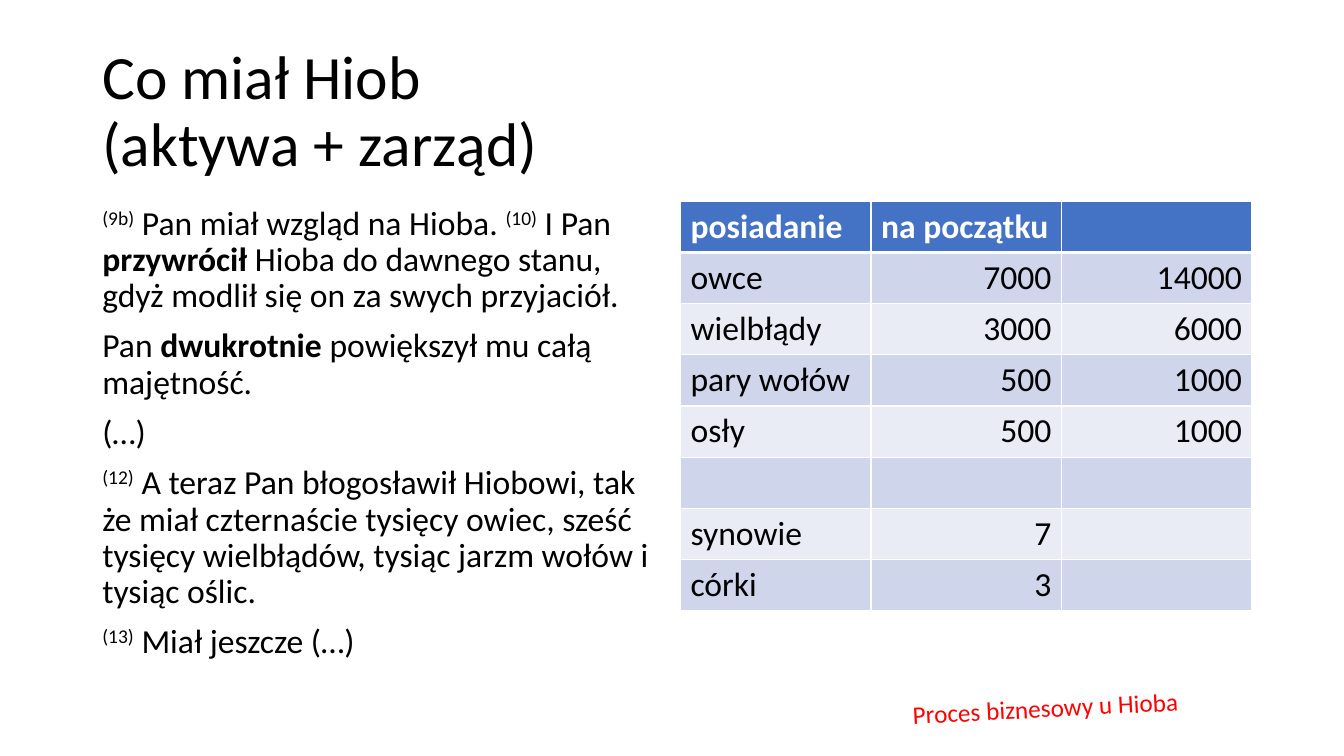
from pptx import Presentation
from pptx.dml.color import RGBColor
from pptx.enum.text import MSO_ANCHOR, PP_ALIGN
from pptx.oxml import parse_xml
from pptx.oxml.ns import nsdecls
from pptx.util import Cm, Pt

# Content: each passage is a list of (style, text) runs
TITLE = "Co miał Hiob\v(aktywa + zarząd)"
VERSES = [
    [("sup", "(9b)"), ("", " Pan miał wzgląd na Hioba. "), ("sup", "(10)"),
     ("", " I Pan "), ("bold", "przywrócił"),
     ("", " Hioba do dawnego stanu, gdyż modlił się on za swych przyjaciół.")],
    [("", "Pan "), ("bold", "dwukrotnie"),
     ("", " powiększył mu całą majętność.")],
    [("", "(…)")],
    [("sup", "(12)"),
     ("", " A teraz Pan błogosławił Hiobowi, tak że miał czternaście tysięcy "
          "owiec, sześć tysięcy wielbłądów, tysiąc jarzm wołów i tysiąc oślic.")],
    [("sup", "(13)"), ("", " Miał jeszcze (…)")],
]
ASSETS = [
    ("posiadanie", "na początku", ""),
    ("owce", "7000", "14000"),
    ("wielbłądy", "3000", "6000"),
    ("pary wołów", "500", "1000"),
    ("osły", "500", "1000"),
    ("", "", ""),
    ("synowie", "7", ""),
    ("córki", "3", ""),
]
TAG = "Proces biznesowy u Hioba "

THEME = {
    "font": "Calibri",
    "title": 44, "body": 24, "tag": 18,
    "ink": "000000", "white": "FFFFFF", "red": "FF0000",
    "head": "4472C4", "bands": ("E9EBF5", "CFD5EA"),
}

# Layout in centimetres
LEFT, TOP, COL, ROW = 2.33, 5.07, 4.8, 1.29
GRID = 17.15


def style(font, size, ink="ink", bold=False):
    font.name = THEME["font"]
    font.size = Pt(THEME[size])
    font.bold = bold
    font.color.rgb = RGBColor.from_string(THEME[ink])


def add_box(slide, left, top, width, height):
    box = slide.shapes.add_textbox(Cm(left), Cm(top), Cm(width), Cm(height))
    box.text_frame.word_wrap = True
    return box


def add_title(slide):
    frame = add_box(slide, LEFT, 1.01, 29.21, 3.68).text_frame
    frame.vertical_anchor = MSO_ANCHOR.MIDDLE
    frame.text = TITLE
    para = frame.paragraphs[0]
    para.line_spacing = 0.9
    for run in para.runs:
        style(run.font, "title")


def add_verses(slide):
    frame = add_box(slide, LEFT, TOP, 14.4, 12.09).text_frame
    for i, verse in enumerate(VERSES):
        para = frame.add_paragraph() if i else frame.paragraphs[0]
        para.line_spacing = 0.9
        para.space_before = Pt(10)
        for kind, text in verse:
            run = para.add_run()
            run.text = text
            style(run.font, "body", bold=kind == "bold")
            if kind == "sup":
                run._r.get_or_add_rPr().set("baseline", "30000")


def add_edges(cell, widths):
    props = cell._tc.get_or_add_tcPr()
    for side, width in zip("LRTB", widths):
        props.append(parse_xml(
            f'<a:ln{side} {nsdecls("a")} w="{Pt(width)}"><a:solidFill>'
            f'<a:srgbClr val="{THEME["white"]}"/></a:solidFill></a:ln{side}>'))


def add_assets(slide):
    rows, cols = len(ASSETS), len(ASSETS[0])
    table = slide.shapes.add_table(
        rows, cols, Cm(GRID), Cm(TOP), Cm(COL * cols), Cm(ROW * rows)).table
    for col in table.columns:
        col.width = Cm(COL)
    for r, line in enumerate(ASSETS):
        table.rows[r].height = Cm(ROW)
        head = r == 0
        for c, text in enumerate(line):
            cell = table.cell(r, c)
            # The rule under the header is thicker than the others
            add_edges(cell, (1, 1, 3 if r == 1 else 1, 3 if head else 1))
            cell.fill.solid()
            cell.fill.fore_color.rgb = RGBColor.from_string(
                THEME["head"] if head else THEME["bands"][r % 2])
            cell.text = text
            para = cell.text_frame.paragraphs[0]
            if c and not head:
                para.alignment = PP_ALIGN.RIGHT
            for run in para.runs:
                style(run.font, "body", "white" if head else "ink", head)


def add_tag(slide):
    box = add_box(slide, 21.82, 17.32, 9.19, 1.02)
    box.rotation = -2.9
    box.text_frame.text = TAG
    para = box.text_frame.paragraphs[0]
    para.alignment = PP_ALIGN.CENTER
    style(para.runs[0].font, "tag", "red")


def main():
    deck = Presentation()
    deck.slide_width, deck.slide_height = Cm(33.87), Cm(19.05)
    slide = deck.slides.add_slide(deck.slide_layouts[6])
    add_title(slide)
    add_verses(slide)
    add_assets(slide)
    add_tag(slide)
    deck.save("out.pptx")


if __name__ == "__main__":
    main()
